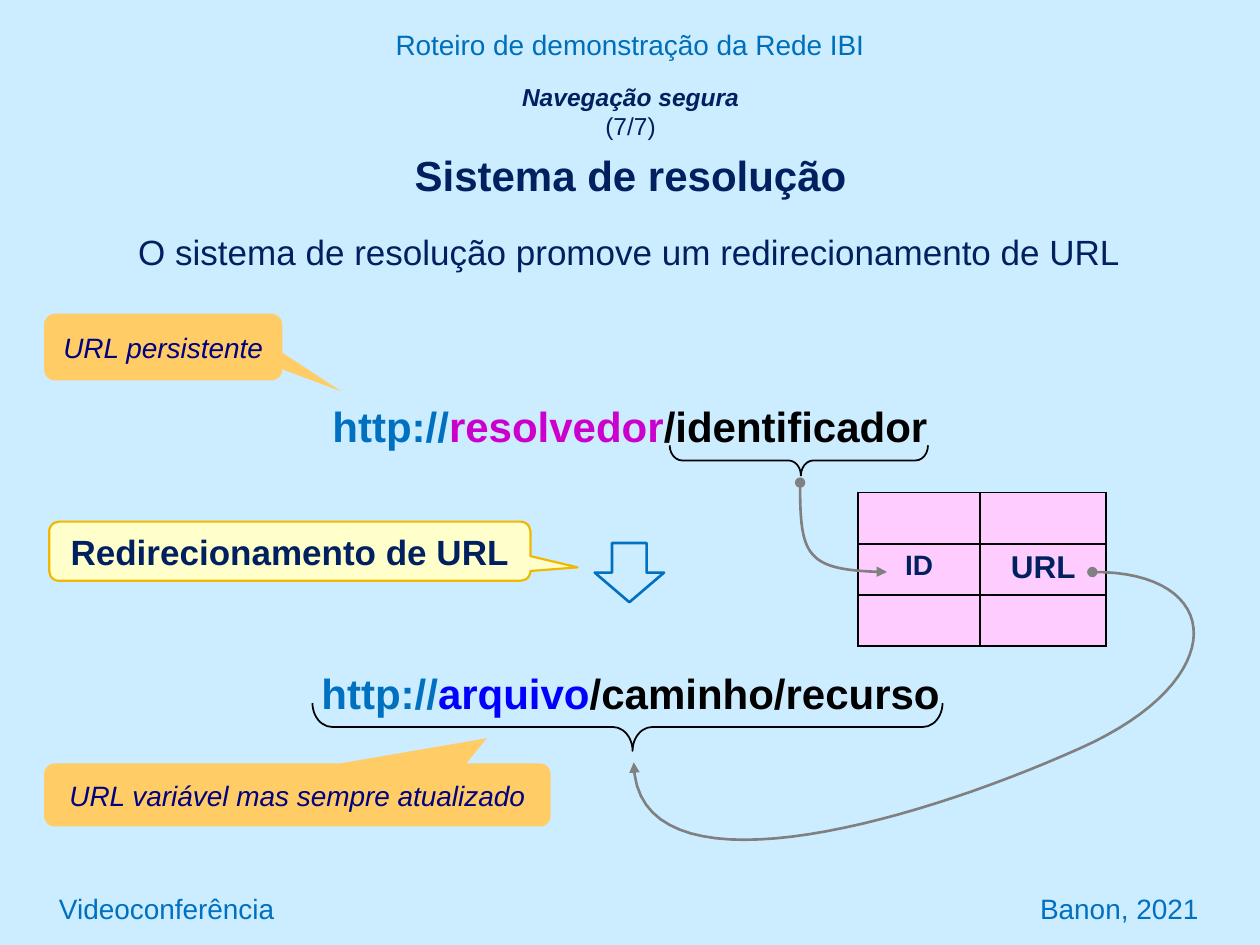
from lxml import etree
from pptx import Presentation
from pptx.dml.color import RGBColor
from pptx.enum.shapes import MSO_SHAPE
from pptx.enum.text import MSO_ANCHOR, MSO_AUTO_SIZE, PP_ALIGN
from pptx.oxml.ns import qn
from pptx.util import Inches, Pt

CALLOUT = MSO_SHAPE.ROUNDED_RECTANGULAR_CALLOUT
DOWN_ARROW = MSO_SHAPE.DOWN_ARROW
LEFT_BRACE = MSO_SHAPE.LEFT_BRACE
TOP, MIDDLE = MSO_ANCHOR.TOP, MSO_ANCHOR.MIDDLE
LEFT, CENTER, RIGHT = PP_ALIGN.LEFT, PP_ALIGN.CENTER, PP_ALIGN.RIGHT

COLORS = {
    "background": "CCECFF", "header": "006FBA", "blue": "0070C0",
    "navy": "002060", "label": "000080", "host": "0000FF",
    "resolver": "CC00CC", "black": "000000", "gray": "808080",
    "orange": "FFCC66", "yellow": "FFFFCC", "gold": "F2B800", "pink": "FFCCFF",
}
FONT = "Arial"
COLUMNS, ROWS = 100, 75
LAYOUT_TITLE_ONLY = 5


def rgb(name):
    """Return the palette colour with this name."""
    return RGBColor.from_string(COLORS[name])


def write(paragraph, text, size=16, color="navy", bold=False, italic=False, align=CENTER):
    """Append a formatted run to a paragraph."""
    paragraph.alignment = align
    run = paragraph.add_run()
    run.text = text
    font = run.font
    font.name, font.size, font.bold, font.italic = FONT, Pt(size), bold, italic
    font.color.rgb = rgb(color)


def bezier(start, first, second, end, steps=32):
    """Return points along a cubic curve, leaving out its start."""
    points = []
    for step in range(1, steps + 1):
        t = step / steps
        weights = ((1 - t) ** 3, 3 * t * (1 - t) ** 2, 3 * t * t * (1 - t), t ** 3)
        points.append(tuple(
            sum(weight * value for weight, value in zip(weights, axis))
            for axis in zip(start, first, second, end)))
    return points


class SlideBuilder:
    """Hold the style and the current slide, placed on a 100 by 75 grid."""

    def __init__(self, presentation):
        """Add a slide with a plain background."""
        self.column = presentation.slide_width / COLUMNS
        self.row = presentation.slide_height / ROWS
        layout = presentation.slide_layouts[LAYOUT_TITLE_ONLY]
        self.slide = presentation.slides.add_slide(layout)
        self.slide.background.fill.solid()
        self.slide.background.fill.fore_color.rgb = rgb("background")

    def point(self, x, y):
        """Convert a grid position to slide units."""
        return round(x * self.column), round(y * self.row)

    def box(self, left, top, width, height):
        """Convert a grid rectangle to slide units."""
        return self.point(left, top) + self.point(width, height)

    def title(self, kicker, counter, heading, place):
        """Fill the title placeholder."""
        shape = self.slide.shapes.title
        shape.left, shape.top, shape.width, shape.height = self.box(*place)
        frame = shape.text_frame
        frame.vertical_anchor, frame.auto_size = TOP, MSO_AUTO_SIZE.NONE
        paragraph = frame.paragraphs[0]
        write(paragraph, kicker, size=14, bold=True, italic=True)
        paragraph.add_line_break()
        write(paragraph, counter, size=14)
        paragraph = frame.add_paragraph()
        paragraph.space_before = Pt(5)
        write(paragraph, heading, size=24, bold=True)

    def text(self, parts, place, anchor=TOP, **style):
        """Add a one-line text box from pairs of text and colour."""
        frame = self.slide.shapes.add_textbox(*self.box(*place)).text_frame
        frame.word_wrap, frame.vertical_anchor = True, anchor
        for text, color in parts:
            write(frame.paragraphs[0], text, color=color, **style)

    def paint(self, shape, fill=None, line=None, width=1):
        """Set the fill and the outline of a shape."""
        shape.shadow.inherit = False
        if fill:
            shape.fill.solid()
            shape.fill.fore_color.rgb = rgb(fill)
        else:
            shape.fill.background()
        if line:
            shape.line.color.rgb = rgb(line)
            shape.line.width = Pt(width)
        else:
            shape.line.fill.background()

    def shape(self, kind, place, adjustments=(), **look):
        """Add a preset shape."""
        shape = self.slide.shapes.add_shape(kind, *self.box(*place))
        for index, value in enumerate(adjustments):
            shape.adjustments[index] = value
        self.paint(shape, **look)
        return shape

    def callout(self, text, place, tip, look, **style):
        """Add a rounded callout with a label."""
        shape = self.shape(CALLOUT, place, (*tip, 0.167), **look)
        shape.text_frame.word_wrap = True
        shape.text_frame.vertical_anchor = MIDDLE
        write(shape.text_frame.paragraphs[0], text, **style)

    def brace(self, left, top, width, height):
        """Add a brace lying under a text, with its tip downwards."""
        place = (left + (width - height) / 2, top + (height - width) / 2, height, width)
        shape = self.shape(LEFT_BRACE, place, (0.412, 0.492), line="black")
        shape.rotation = 270
        shape._element.spPr.find(qn("a:xfrm")).set("flipV", "1")

    def curve(self, start, *segments):
        """Add a curved arrow that starts with a dot."""
        points, current = [], start
        for segment in segments:
            points += bezier(current, *segment)
            current = segment[-1]
        builder = self.slide.shapes.build_freeform(*self.point(*start))
        builder.add_line_segments([self.point(*spot) for spot in points], close=False)
        shape = builder.convert_to_shape()
        self.paint(shape, line="gray", width=1.5)
        line = shape.line._get_or_add_ln()
        for tag, kind in (("a:headEnd", "oval"), ("a:tailEnd", "triangle")):
            etree.SubElement(line, qn(tag), type=kind)

    def table(self, place, widths, row_count, entries, fill):
        """Add a bordered table; entries maps a cell to its text and size."""
        table = self.slide.shapes.add_table(row_count, len(widths), *self.box(*place)).table
        table.first_row = table.horz_banding = False
        for column, width in zip(table.columns, widths):
            column.width = round(width * self.column)
        for row in range(row_count):
            for column in range(len(widths)):
                cell = table.cell(row, column)
                self.border(cell)
                cell.fill.solid()
                cell.fill.fore_color.rgb = rgb(fill)
                if (row, column) in entries:
                    text, size = entries[row, column]
                    write(cell.text_frame.paragraphs[0], text, size=size, bold=True)

    def border(self, cell):
        """Draw a thin line on each side of a cell."""
        properties = cell._tc.get_or_add_tcPr()
        for side in ("a:lnL", "a:lnR", "a:lnT", "a:lnB"):
            line = etree.SubElement(properties, qn(side), w=str(Pt(1)))
            solid = etree.SubElement(line, qn("a:solidFill"))
            etree.SubElement(solid, qn("a:srgbClr"), val=COLORS["black"])


def main():
    """Build the slide about the resolution system."""
    presentation = Presentation()
    presentation.slide_width, presentation.slide_height = Inches(10), Inches(7.5)
    builder = SlideBuilder(presentation)

    builder.text([("Roteiro de demonstração da Rede IBI", "header")], (0, 1.7, 100, 3.7))
    for text, align in (("Videoconferência", LEFT), ("Banon, 2021", RIGHT)):
        builder.text([(text, "blue")], (3.7, 70, 92.4, 4.2), anchor=MIDDLE, align=align)
    builder.title("Navegação segura", "(7/7)", "Sistema de resolução", (7.5, 6, 85.1, 9.8))
    builder.text([("O sistema de resolução promove um redirecionamento de URL", "navy")],
                 (9.2, 17.8, 81.5, 4.4), size=20)

    addresses = (
        ("arquivo", "host", "/caminho/recurso", (21, 52.5, 58.1, 5)),
        ("resolvedor", "resolver", "/identificador", (25, 31.3, 50, 5)),
    )
    for host, color, ending, place in addresses:
        parts = [("http://", "blue"), (host, color), (ending, "black")]
        builder.text(parts, place, size=24, bold=True)

    labels = (
        ("URL persistente", (3.5, 24.9, 18.9, 5.3), (0.747, 0.662)),
        ("URL variável mas sempre atualizado", (3.5, 60.6, 40.2, 5), (0.374, -0.901)),
    )
    for text, place, tip in labels:
        builder.callout(text, place, tip, {"fill": "orange"}, color="label", italic=True)

    builder.shape(DOWN_ARROW, (47.2, 43.1, 5.5, 4.7), line="blue", width=1.5)
    builder.table((68.1, 39.1, 19.7, 12.2), (9.7, 10), 3,
                  {(1, 0): ("ID", 16), (1, 1): ("URL", 18)}, "pink")
    builder.curve((63.5, 38.3), ((63.5, 44.2), (63.9, 45.3), (70.4, 45.4)))
    builder.curve((86.7, 45.4), ((97.3, 45.3), (97.9, 54), (85.7, 59.4)),
                  ((71.9, 65.6), (50.4, 71.5), (50.3, 60.5)))
    builder.brace(24.8, 55.8, 50, 3.8)
    builder.brace(53.15, 35.35, 20.5, 2.4)
    builder.callout("Redirecionamento de URL", (3.9, 41.4, 38.2, 4.7), (0.598, 0.273),
                    {"fill": "yellow", "line": "gold", "width": 1.25}, size=20, bold=True)
    presentation.save("out.pptx")


if __name__ == "__main__":
    main()
